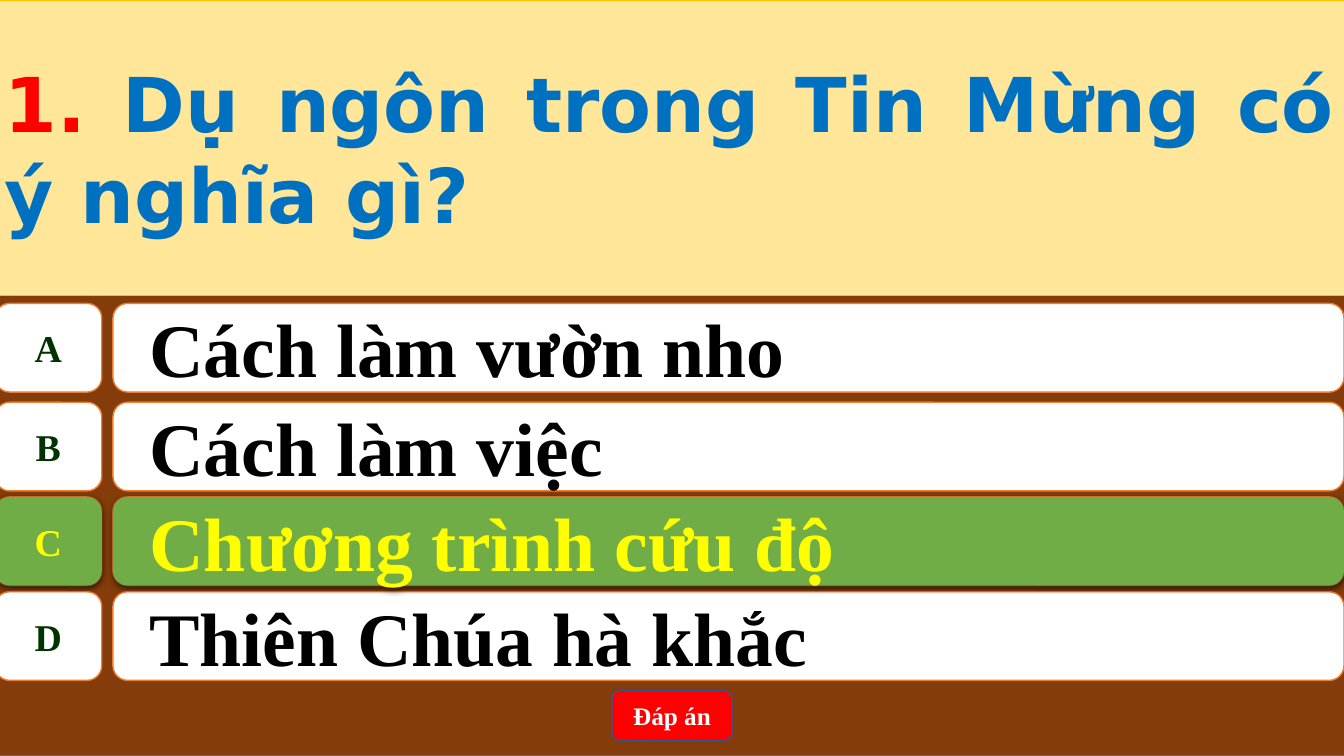
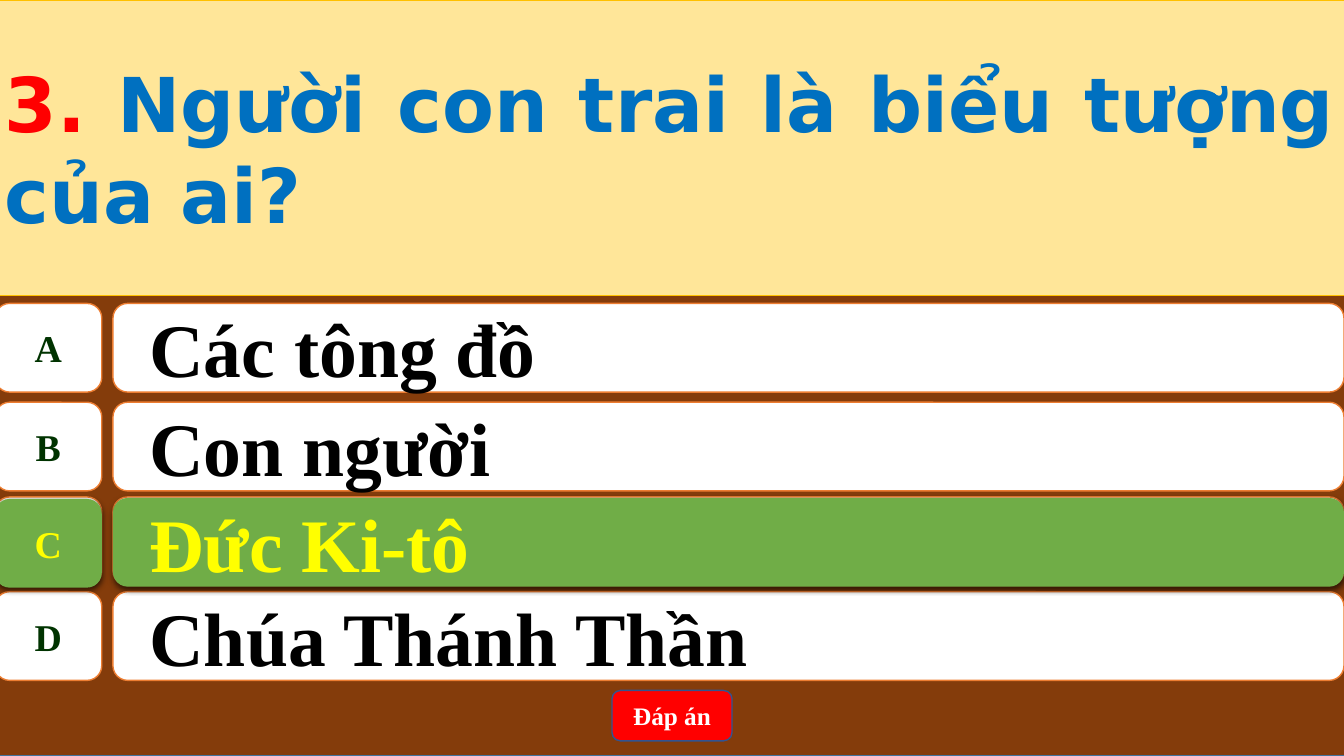
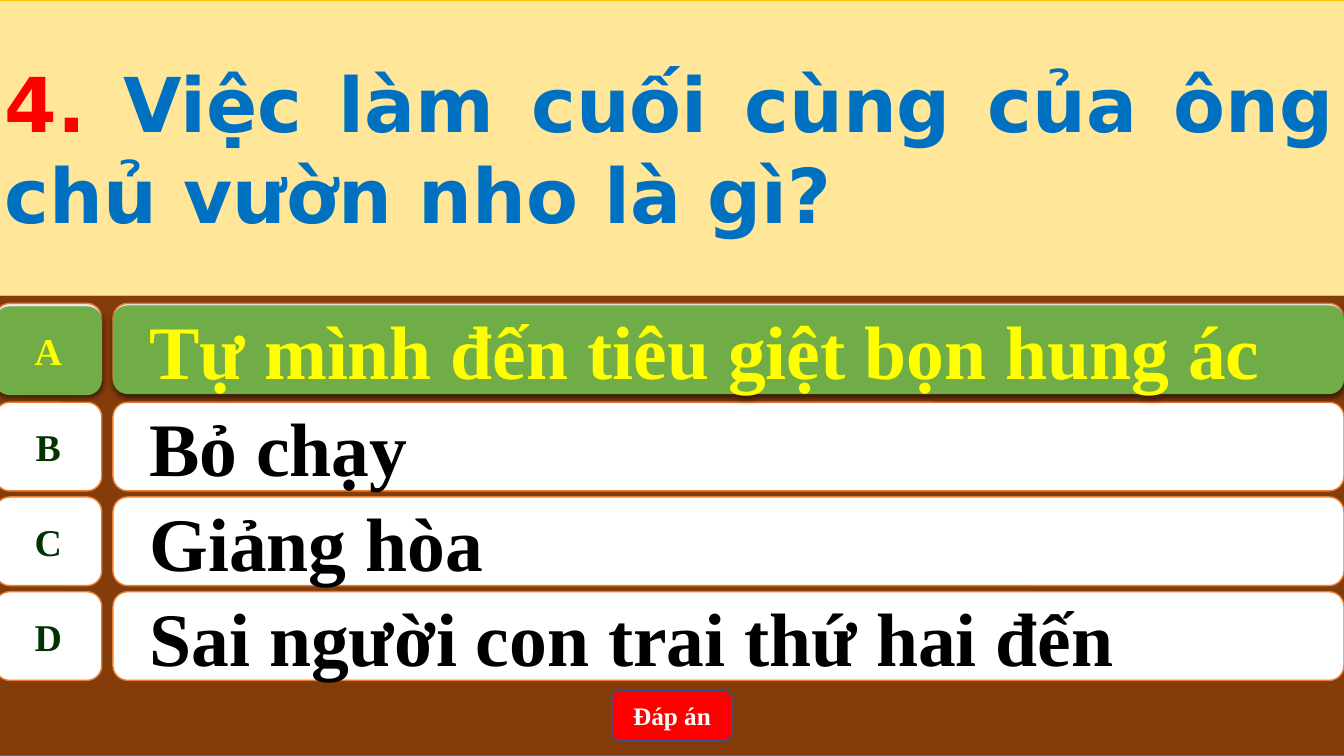
import pptx
import pptx.dml.color
import pptx.enum.shapes
import pptx.enum.text
import pptx.oxml
import pptx.oxml.ns
import pptx.util
from pptx.util import Inches

SHAPE = pptx.enum.shapes.MSO_SHAPE
ALIGN = pptx.enum.text.PP_ALIGN

SERIF = "Times New Roman"
SANS = "DejaVu Sans"
BROWN, SAND, WHITE, GREEN, RED = "843C0B", "FFE699", "FFFFFF", "70AD47", "FF0000"
BLUE, YELLOW, BLACK, DARK_GREEN = "0070C0", "FFFF00", "000000", "003300"
ORANGE, GOLD, STEEL, NAVY = "ED7D31", "FFC000", "43739E", "325491"

LEFT_EDGE, FULL_WIDTH = -0.05, 13.39
ROW_TOPS = {"A": 3.01, "B": 3.99, "C": 4.93, "D": 5.87}
ROW_HEIGHT = 0.88

SHADOW = (
    '<a:outerShdw %s blurRad="57150" dist="19050" dir="5400000" algn="ctr" rotWithShape="0">'
    '<a:srgbClr val="000000"><a:alpha val="63000"/></a:srgbClr></a:outerShdw>'
    % pptx.oxml.ns.nsdecls("a")
)

QUESTIONS = [
    ("1. ", "Dụ ngôn trong Tin Mừng có ý nghĩa gì?",
     ["Cách làm vườn nho", "Cách làm việc", "Chương trình cứu độ", "Thiên Chúa hà khắc"],
     "C", 0, 0),
    ("3. ", "Người con trai là biểu tượng của ai?",
     ["Các tông đồ", "Con người", "Đức Ki-tô", "Chúa Thánh Thần"],
     "C", 0.02, 0.01),
    ("4. ", "Việc làm cuối cùng của ông chủ vườn nho là gì?",
     ["Tự mình đến tiêu giệt bọn hung ác", "Bỏ chạy", "Giảng hòa",
      "Sai người con trai thứ hai đến"],
     "A", 0.03, 0.02),
]


def color(value):
    return pptx.dml.color.RGBColor.from_string(value)


class Quiz:
    """Holds the deck, its style and the slide being filled."""

    def __init__(self):
        self.deck = pptx.Presentation()
        self.deck.slide_width = Inches(13.33)
        self.deck.slide_height = Inches(7.5)
        self.slide = None

    def new_slide(self):
        self.slide = self.deck.slides.add_slide(self.deck.slide_layouts[6])
        self.box(self.slide.shapes, SHAPE.RECTANGLE, (LEFT_EDGE, 0, FULL_WIDTH, 7.5), BROWN, STEEL)

    def box(self, shapes, kind, place, fill, line=None, width=1):
        box = shapes.add_shape(kind, *map(Inches, place))
        box.shadow.inherit = False
        box.fill.solid()
        box.fill.fore_color.rgb = color(fill)
        if line:
            box.line.color.rgb = color(line)
            box.line.width = pptx.util.Pt(width)
        else:
            box.line.fill.background()
        return box

    def label(self, box, spans, size, font=SERIF, alignment=ALIGN.CENTER, wrap=True):
        frame = box.text_frame
        frame.word_wrap = wrap
        frame.vertical_anchor = pptx.enum.text.MSO_ANCHOR.MIDDLE
        para = frame.paragraphs[0]
        para.alignment = alignment
        for text, ink in spans:
            span = para.add_run()
            span.text = text
            span.font.name = font
            span.font.size = pptx.util.Pt(size)
            span.font.bold = True
            span.font.color.rgb = color(ink)
        return para

    def row(self, letter, answer, correct=False, badge_shift=0, answer_shift=0):
        shapes = self.slide.shapes.add_group_shape().shapes
        fill, line = (GREEN, None) if correct else (WHITE, ORANGE)
        top = ROW_TOPS[letter]
        badge = self.box(shapes, SHAPE.FLOWCHART_ALTERNATE_PROCESS,
                         (LEFT_EDGE, top + badge_shift, 1.06, ROW_HEIGHT), fill, line)
        self.label(badge, [(letter, YELLOW if correct else DARK_GREEN)], 27, wrap=False)
        bar = self.box(shapes, SHAPE.ROUNDED_RECTANGLE,
                       (1.12, top + answer_shift, 12.21, ROW_HEIGHT), fill, line)
        para = self.label(bar, [(answer, YELLOW if correct else BLACK)], 54, alignment=ALIGN.LEFT)
        para.level = 1
        properties = para._p.get_or_add_pPr()
        properties.set("marL", str(Inches(0.5)))
        properties.set("indent", str(Inches(-0.28)))
        if correct:
            for box in (badge, bar):
                effects = box._element.spPr.find(pptx.oxml.ns.qn("a:effectLst"))
                effects.append(pptx.oxml.parse_xml(SHADOW))

    def button(self, text):
        button = self.box(self.slide.shapes, SHAPE.ROUNDED_RECTANGLE,
                          (6.07, 6.85, 1.19, 0.5), RED, NAVY)
        self.label(button, [(text, WHITE)], 18)

    def question(self, number, text):
        band = self.box(self.slide.shapes, SHAPE.RECTANGLE,
                        (LEFT_EDGE, 0, FULL_WIDTH, 2.93), SAND, GOLD, 0.5)
        self.label(band, [(number, RED), (text, BLUE)], 54, SANS, ALIGN.JUSTIFY)


def main():
    quiz = Quiz()
    for number, text, answers, correct, badge_shift, answer_shift in QUESTIONS:
        quiz.new_slide()
        choices = dict(zip(ROW_TOPS, answers))
        for letter, answer in choices.items():
            quiz.row(letter, answer)
        quiz.button("Đáp án")
        quiz.row(correct, choices[correct], True, badge_shift, answer_shift)
        quiz.question(number, text)
    quiz.deck.save("out.pptx")


if __name__ == "__main__":
    main()
